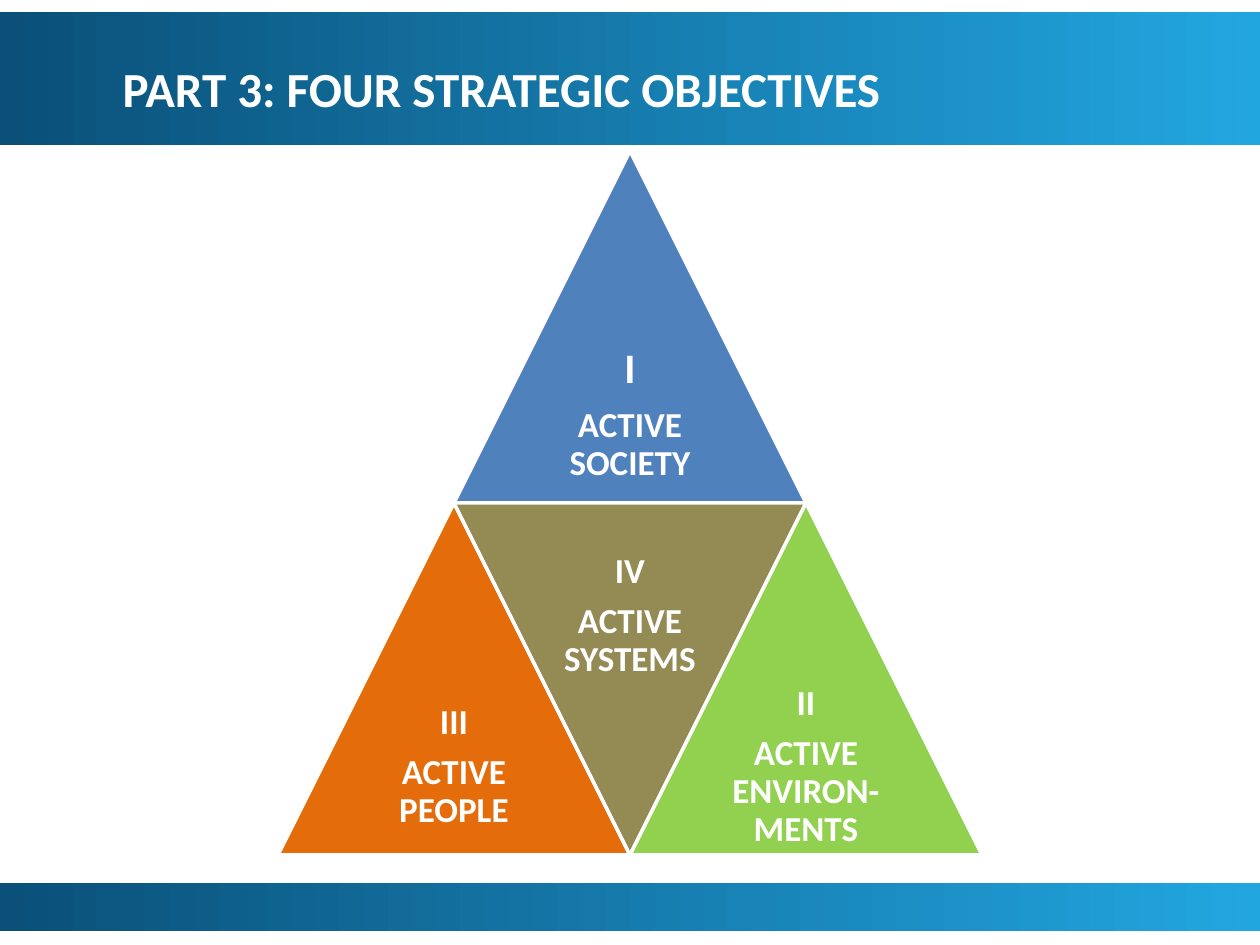
import pptx
import pptx.util
from pptx.dml.color import RGBColor
from pptx.enum.shapes import MSO_SHAPE
from pptx.enum.text import MSO_ANCHOR, MSO_AUTO_SIZE, PP_ALIGN

TITLE = "PART 3: FOUR STRATEGIC OBJECTIVES"
# numeral, numeral size, label, colour, column (half sides), row, points down, label shift, inset
OBJECTIVES = [
    ("I", 24, "ACTIVE SOCIETY", "4F81BD", 1, 0, False, 0, 12),
    ("III", 20, "ACTIVE PEOPLE", "E46C0A", 0, 1, False, 0, 10),
    ("IV", 20, "ACTIVE SYSTEMS", "948A54", 1, 1, True, 25, 10),
    ("II", 20, "ACTIVE ENVIRON-MENTS", "92D050", 2, 1, False, 0, 10),
]
THEME = {
    "font": "Calibri", "text": "FFFFFF", "outline": "FFFFFF",
    "band": ("0A5079", "22A6E0"), "title_size": 28, "label_size": 20,
}
EMU_PER_PX = 914400 // 126
WIDTH, HEIGHT = 1260, 945
SIDE, PYRAMID_TOP = 352, 151
BANDS = [(883, 48), (12, 133)]  # top, height


def px(length):
    return pptx.util.Emu(length * EMU_PER_PX)


def box(left, top, width, height):
    return px(left), px(top), px(width), px(height)


def rgb(value):
    return RGBColor.from_string(value)


def add_run(paragraph, text, size):
    run = paragraph.add_run()
    run.text = text
    run.font.name = THEME["font"]
    run.font.size = pptx.util.Pt(size)
    run.font.bold = True
    run.font.color.rgb = rgb(THEME["text"])


def add_band(slide, top, height):
    band = slide.shapes.add_shape(MSO_SHAPE.RECTANGLE, *box(0, top, WIDTH, height))
    band.shadow.inherit = False
    band.line.fill.background()
    band.fill.gradient()
    band.fill.gradient_angle = 0
    for stop, colour in zip(band.fill.gradient_stops, THEME["band"]):
        stop.color.rgb = rgb(colour)


def format_title(slide):
    title = slide.shapes.title
    title.left, title.top, title.width, title.height = box(110, 47, 1071, 82)
    title.element.getparent().append(title.element)  # in front of the band
    frame = title.text_frame
    frame.vertical_anchor = MSO_ANCHOR.MIDDLE
    frame.auto_size = MSO_AUTO_SIZE.NONE
    frame.paragraphs[0].alignment = PP_ALIGN.LEFT
    add_run(frame.paragraphs[0], TITLE, THEME["title_size"])


def add_objective(slide, numeral, numeral_size, label, colour, column, row,
                  points_down, shift, inset):
    half = SIDE // 2
    left = WIDTH // 2 - SIDE + column * half
    top = PYRAMID_TOP + row * SIDE
    triangle = slide.shapes.add_shape(
        MSO_SHAPE.ISOSCELES_TRIANGLE, *box(left, top, SIDE, SIDE))
    triangle.shadow.inherit = False
    triangle.rotation = 180 if points_down else 0
    triangle.fill.solid()
    triangle.fill.fore_color.rgb = rgb(colour)
    triangle.line.color.rgb = rgb(THEME["outline"])
    triangle.line.width = pptx.util.Pt(2)

    text_top = top + shift + (0 if points_down else half)
    frame = slide.shapes.add_textbox(*box(left + half // 2, text_top, half, half)).text_frame
    frame.word_wrap = True
    frame.vertical_anchor = MSO_ANCHOR.MIDDLE
    frame.margin_left = frame.margin_right = px(inset)
    frame.margin_top = frame.margin_bottom = px(inset)
    lines = [(numeral, numeral_size), (label, THEME["label_size"])]
    for index, (text, size) in enumerate(lines):
        paragraph = frame.add_paragraph() if index else frame.paragraphs[0]
        paragraph.alignment = PP_ALIGN.CENTER
        paragraph.line_spacing = 0.9
        paragraph.space_after = pptx.util.Pt(size * 0.35)
        add_run(paragraph, text, size)


def main():
    presentation = pptx.Presentation()
    presentation.slide_width, presentation.slide_height = px(WIDTH), px(HEIGHT)
    slide = presentation.slides.add_slide(presentation.slide_layouts[5])
    for band in BANDS:
        add_band(slide, *band)
    for objective in OBJECTIVES:
        add_objective(slide, *objective)
    format_title(slide)
    presentation.save("out.pptx")


if __name__ == "__main__":
    main()
